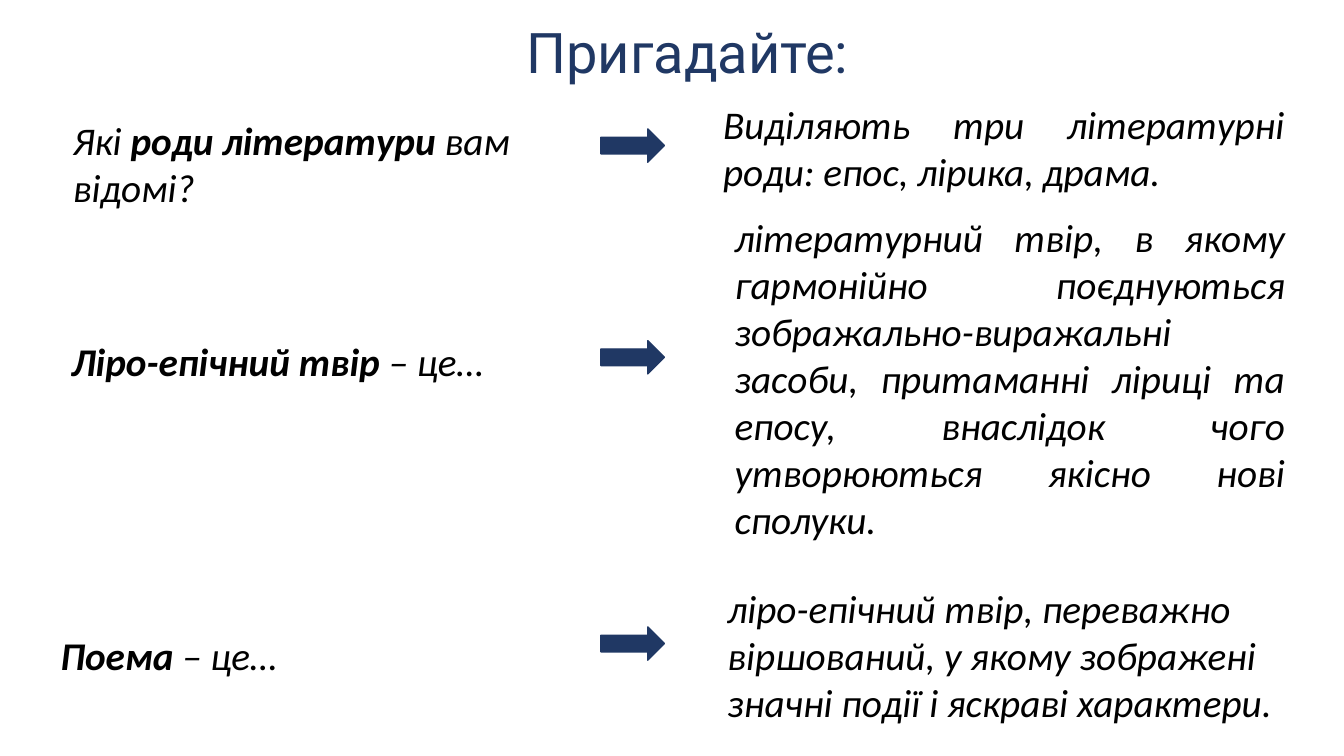
from pptx import Presentation
from pptx.dml.color import RGBColor
from pptx.enum.shapes import MSO_SHAPE
from pptx.enum.text import MSO_ANCHOR, MSO_AUTO_SIZE, PP_ALIGN
from pptx.util import Inches, Pt

COLORS = {"navy": "203864", "text": "000000", "paper": "FFFFFF"}
ARROW_LEFT, ARROW_WIDTH, ARROW_HEIGHT = 5.96, 0.63, 0.33
ANSWER_LEFT = 7.03


def color(name):
    return RGBColor.from_string(COLORS[name])


class RecallSlide:
    body_font, body_size = "Calibri", 28
    title_font, title_size = "Roboto", 40

    def __init__(self, prs):
        self.slide = prs.slides.add_slide(prs.slide_layouts[5])

    def shape(self, kind, box, fill):
        shape = self.slide.shapes.add_shape(kind, *map(Inches, box))
        shape.shadow.inherit = False
        shape.fill.solid()
        shape.fill.fore_color.rgb = color(fill)
        return shape

    def run(self, paragraph, text, font, size, ink, bold=False, italic=False):
        run = paragraph.add_run()
        run.text = text
        run.font.name = font
        run.font.size = Pt(size)
        run.font.color.rgb = color(ink)
        run.font.bold = bold
        run.font.italic = italic

    def title(self, text, box):
        title = self.slide.shapes.title
        title.left, title.top, title.width, title.height = map(Inches, box)
        frame = title.text_frame
        frame.word_wrap = True
        frame.auto_size = MSO_AUTO_SIZE.NONE
        frame.vertical_anchor = MSO_ANCHOR.TOP
        heading = frame.paragraphs[0]
        heading.alignment = PP_ALIGN.CENTER
        heading.line_spacing = 1.0
        self.run(heading, text, self.title_font, self.title_size, "navy")

    def card(self, box, parts, align=PP_ALIGN.LEFT):
        """Add a white rounded box; parts are (text, bold) pairs."""
        card = self.shape(MSO_SHAPE.ROUNDED_RECTANGLE, box, "paper")
        card.line.fill.background()
        frame = card.text_frame
        frame.word_wrap = True
        frame.vertical_anchor = MSO_ANCHOR.MIDDLE
        paragraph = frame.paragraphs[0]
        paragraph.alignment = align
        for text, bold in parts:
            self.run(paragraph, text, self.body_font, self.body_size, "text", bold, italic=True)

    def arrow(self, top):
        box = (ARROW_LEFT, top, ARROW_WIDTH, ARROW_HEIGHT)
        arrow = self.shape(MSO_SHAPE.RIGHT_ARROW, box, "navy")
        arrow.line.color.rgb = color("navy")
        arrow.line.width = Pt(1)


# Each row: question box, question parts, arrow top,
# answer (top, width, height), answer alignment, answer text
ROWS = [
    ((0.58, 1.17, 5.12, 0.9),
     [("Які ", False), ("роди літератури ", True), ("вам відомі?", False)],
     1.28, (1.01, 5.85, 0.9), PP_ALIGN.JUSTIFY,
     "Виділяють три літературні роди: епос, лірика, драма."),
    ((0.58, 3.3, 5.16, 0.55),
     [("Ліро-епічний твір ", True), ("– це…", False)],
     3.38, (2.14, 5.97, 3.22), PP_ALIGN.JUSTIFY,
     "літературний твір, в якому гармонійно поєднуються "
     "зображально-виражальні засоби, притаманні ліриці та епосу, "
     "внаслідок чого утворюються якісно нові сполуки."),
    ((0.47, 6.18, 5.17, 0.63),
     [("Поема", True), (" – це…", False)],
     6.22, (5.61, 5.97, 1.78), PP_ALIGN.LEFT,
     "ліро-епічний твір, переважно віршований, у якому зображені "
     "значні події і яскраві характери."),
]


def main():
    prs = Presentation()
    prs.slide_width, prs.slide_height = Inches(13.33), Inches(7.5)
    recall = RecallSlide(prs)
    recall.title("Пригадайте:", (4.92, 0.12, 3.8, 0.77))
    for question_box, question, arrow_top, answer_box, align, answer in ROWS:
        recall.card(question_box, question)
        recall.arrow(arrow_top)
        recall.card((ANSWER_LEFT, *answer_box), [(answer, False)], align)
    prs.save("out.pptx")


if __name__ == "__main__":
    main()
